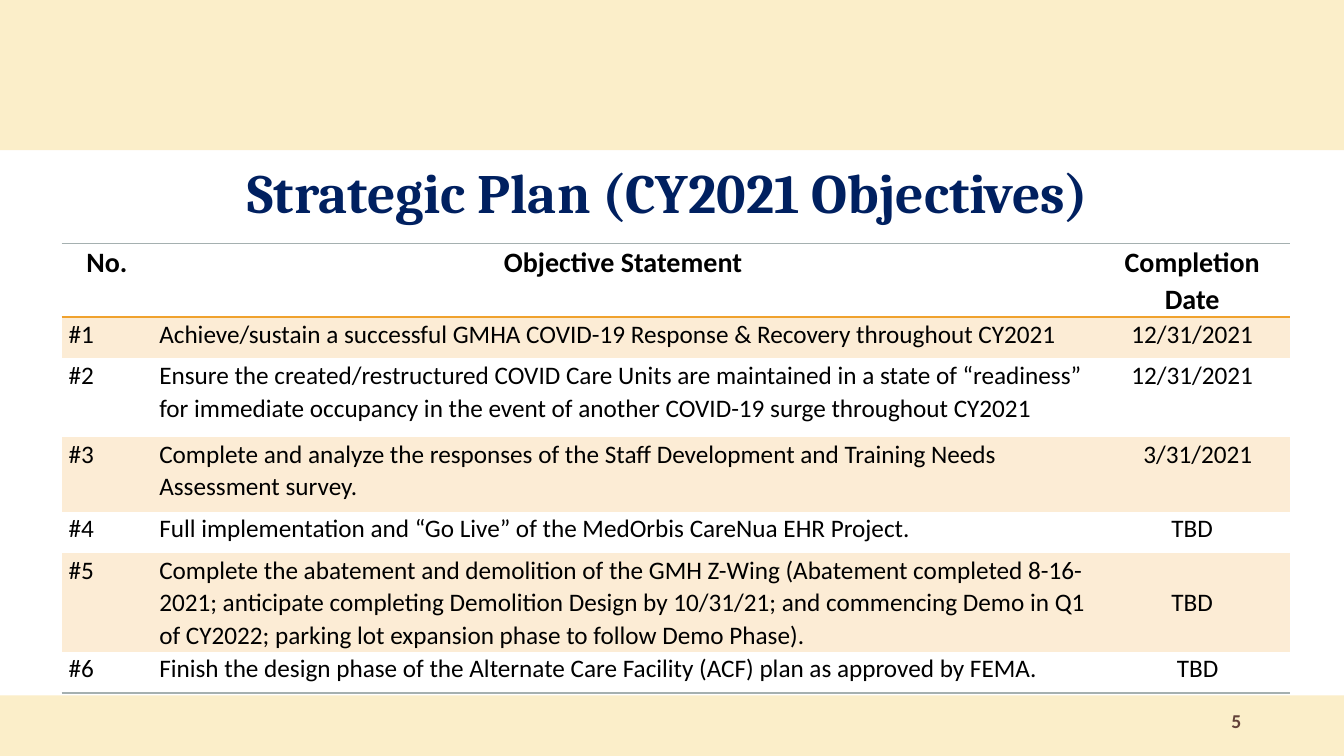
from lxml import etree
from pptx import Presentation, util as u
from pptx.dml.color import RGBColor
from pptx.enum import shapes, text
from pptx.oxml import ns

CREAM = RGBColor(0xFB, 0xEE, 0xC9)
NAVY = RGBColor(0x00, 0x20, 0x60)
BLACK = RGBColor(0x00, 0x00, 0x00)
WHITE = RGBColor(0xFF, 0xFF, 0xFF)
PEACH = RGBColor(0xFC, 0xEC, 0xD5)
ORANGE = RGBColor(0xF0, 0xA2, 0x2E)
GRAY = RGBColor(0xA5, 0xB0, 0xB0)
BROWN = RGBColor(0x62, 0x41, 0x39)

WIDTH, HEIGHT = u.Inches(13.33), u.Inches(7.5)
COLUMN, ROW = WIDTH / 100, HEIGHT / 100
PLAIN_TABLE = "{2D5ABB26-0587-4C30-8999-92F81FD0307C}"
LEFT, CENTER, RIGHT = text.PP_ALIGN.LEFT, text.PP_ALIGN.CENTER, text.PP_ALIGN.RIGHT

COLUMN_SPANS = [6.75, 70.06, 14.63]
ROW_SPANS = [9.73, 5.47, 10.4, 9.87, 5.47, 13.07, 5.47]
OBJECTIVES = [
    ("No.", "Objective Statement", "Completion Date"),
    ("#1", "Achieve/sustain a successful GMHA COVID-19 Response & Recovery "
     "throughout CY2021", "12/31/2021"),
    ("#2", "Ensure the created/restructured COVID Care Units are maintained in a "
     "state of “readiness” for immediate occupancy in the event of another "
     "COVID-19 surge throughout CY2021", "12/31/2021"),
    ("#3", "Complete and analyze the responses of the Staff Development and "
     "Training Needs Assessment survey.", "3/31/2021"),
    ("#4", "Full implementation and “Go Live” of the MedOrbis CareNua EHR Project.",
     "TBD"),
    ("#5", "Complete the abatement and demolition of the GMH Z-Wing (Abatement "
     "completed 8-16-2021; anticipate completing Demolition Design by 10/31/21; "
     "and commencing Demo in Q1 of CY2022; parking lot expansion phase to follow "
     "Demo Phase).", "TBD"),
    ("#6", "Finish the design phase of the Alternate Care Facility (ACF) plan as "
     "approved by FEMA.", "TBD"),
]
INDENTED_DATES = (3, 6)
MIDDLE_DATE = 5


def grid(left, top, width, height):
    return (u.Emu(int(left * COLUMN)), u.Emu(int(top * ROW)),
            u.Emu(int(width * COLUMN)), u.Emu(int(height * ROW)))


def style(paragraph, name, size, color, bold, align):
    paragraph.alignment = align
    font = paragraph.font
    font.name, font.size, font.bold = name, u.Pt(size), bold
    font.color.rgb = color


def add_band(slide, top, height):
    band = slide.shapes.add_shape(shapes.MSO_SHAPE.RECTANGLE, *grid(0, top, 100, height))
    band.shadow.inherit = False
    band.fill.solid()
    band.fill.fore_color.rgb = CREAM
    band.line.fill.background()


def add_label(slide, place, words, *look):
    frame = slide.shapes.add_textbox(*grid(*place)).text_frame
    frame.word_wrap = True
    frame.vertical_anchor = text.MSO_ANCHOR.MIDDLE
    frame.text = words
    style(frame.paragraphs[0], *look)


def add_border(cell, side, color):
    line = etree.SubElement(cell._tc.get_or_add_tcPr(), ns.qn(f"a:{side}"),
                            w=str(u.Pt(1)))
    fill = etree.SubElement(line, ns.qn("a:solidFill"))
    etree.SubElement(fill, ns.qn("a:srgbClr"), val=str(color))


def fill_cell(cell, words, row, column):
    header = row == 0
    cell.margin_left = cell.margin_right = u.Inches(0.07)
    cell.margin_top = cell.margin_bottom = 0
    if header:
        add_border(cell, "lnT", GRAY)
        add_border(cell, "lnB", ORANGE)
    elif row == len(OBJECTIVES) - 1:
        add_border(cell, "lnB", GRAY)
    cell.fill.solid()
    cell.fill.fore_color.rgb = PEACH if row % 2 else WHITE
    cell.text = words
    paragraph = cell.text_frame.paragraphs[0]
    paragraph.line_spacing = 1.07
    style(paragraph, "Calibri", 20 if header else 18, BLACK, header,
          CENTER if header or column == 2 else LEFT)
    if column == 2 and row in INDENTED_DATES:
        paragraph._p.get_or_add_pPr().set("marL", str(u.Inches(0.11)))
    if column == 2 and row == MIDDLE_DATE:
        cell.vertical_anchor = text.MSO_ANCHOR.MIDDLE


def add_objectives(slide, left, top):
    place = grid(left, top, sum(COLUMN_SPANS), sum(ROW_SPANS))
    table = slide.shapes.add_table(len(ROW_SPANS), len(COLUMN_SPANS), *place).table
    table._tbl.tblPr.find(ns.qn("a:tableStyleId")).text = PLAIN_TABLE
    table.horz_banding = False
    for column, span in zip(table.columns, COLUMN_SPANS):
        column.width = u.Emu(int(span * COLUMN))
    for row, span in zip(table.rows, ROW_SPANS):
        row.height = u.Emu(int(span * ROW))
    for row, objective in enumerate(OBJECTIVES):
        for column, words in enumerate(objective):
            fill_cell(table.cell(row, column), words, row, column)


def main():
    presentation = Presentation()
    presentation.slide_width, presentation.slide_height = WIDTH, HEIGHT
    slide = presentation.slides.add_slide(presentation.slide_layouts[6])
    add_band(slide, 92, 8)
    add_band(slide, 0, 19.87)
    add_label(slide, (17.7, 21.33, 67.9, 8), "Strategic Plan (CY2021 Objectives)",
              "Cambria", 39.6, NAVY, True, LEFT)
    add_objectives(slide, 4.58, 32.2)
    add_label(slide, (66.24, 92.67, 26.86, 5.33), "5",
              "Calibri", 14, BROWN, True, RIGHT)
    presentation.save("out.pptx")


if __name__ == "__main__":
    main()
